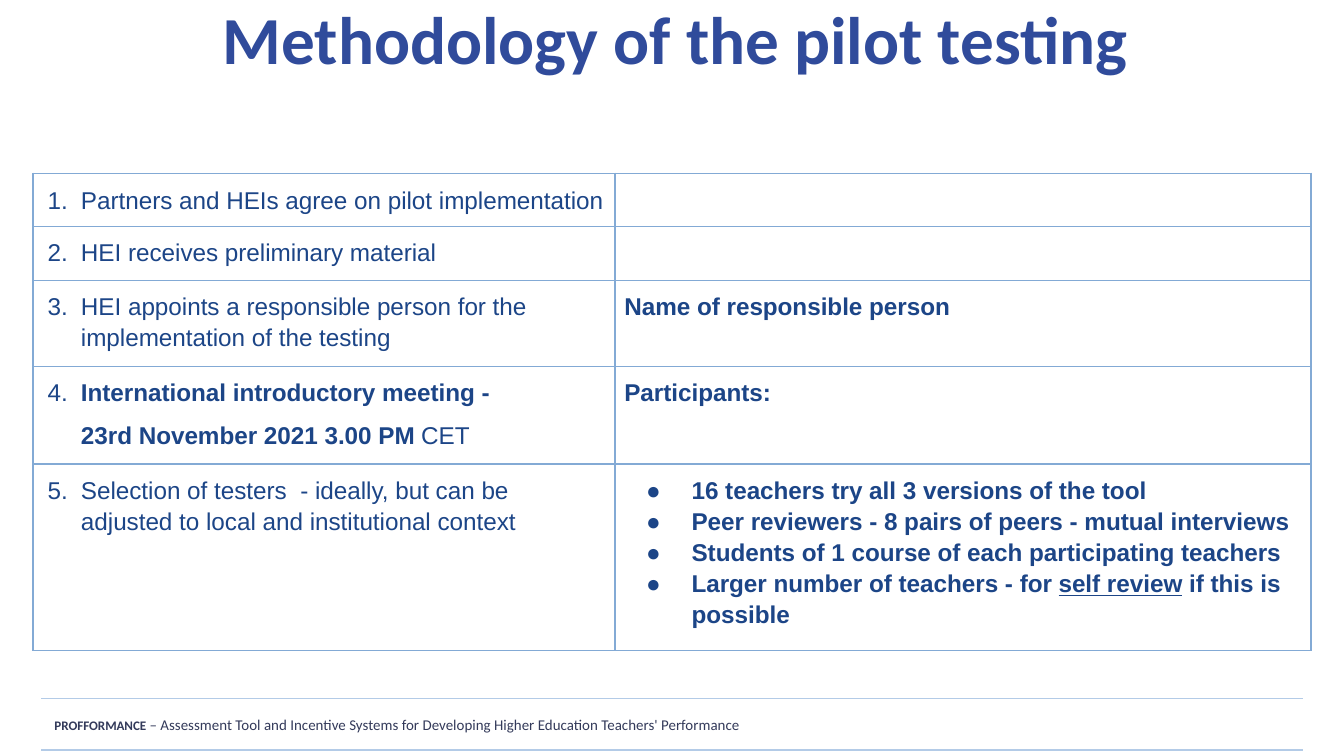
from dataclasses import dataclass

from lxml import etree
from pptx import Presentation
from pptx import util as u
from pptx.dml.color import RGBColor
from pptx.enum import shapes, text
from pptx.oxml.ns import qn


@dataclass(frozen=True)
class Theme:
    title: str = "304B9B"
    body: str = "1C4587"
    footer: str = "333A5A"
    rule: str = "B3CBE7"
    border: str = "83AAD5"
    title_size: int = 36
    body_size: int = 13
    footer_size: int = 8
    project_size: int = 7
    heading_font: str = "Calibri"
    body_font: str = "Arial"


theme = Theme()


def add_run(paragraph, words, color, **formats):
    run = paragraph.add_run()
    run.text = words
    run.font.color.rgb = RGBColor.from_string(color)
    for name, value in formats.items():
        setattr(run.font, name, value)


def add_text_area(slide, left, top, width, height):
    frame = slide.shapes.add_textbox(*map(u.Cm, (left, top, width, height))).text_frame
    margins = dict.fromkeys(
        ("margin_left", "margin_right", "margin_top", "margin_bottom"), u.Cm(0.25))
    formats = {"word_wrap": True, "vertical_anchor": text.MSO_ANCHOR.MIDDLE, **margins}
    for name, value in formats.items():
        setattr(frame, name, value)
    return frame.paragraphs[0]


prs = Presentation()
prs.slide_width, prs.slide_height = u.Cm(25.4), u.Cm(14.29)
slide = prs.slides.add_slide(prs.slide_layouts[6])

# Footer between two rules
for y in (13.2, 14.18):
    rule = slide.shapes.add_connector(
        shapes.MSO_CONNECTOR.STRAIGHT, u.Cm(0.78), u.Cm(y), u.Cm(24.62), u.Cm(y))
    rule.line.color.rgb = RGBColor.from_string(theme.rule)
    rule.line.width = u.Pt(0.75)
    etree.SubElement(rule._element.spPr, qn("a:effectLst"))

footer = add_text_area(slide, 0.78, 13.28, 17.12, 0.84)
add_run(footer, "PROFFORMANCE", theme.footer, bold=True,
        size=u.Pt(theme.project_size), name=theme.heading_font)
add_run(footer,
        " – Assessment Tool and Incentive Systems for Developing "
        "Higher Education Teachers' Performance",
        theme.footer, size=u.Pt(theme.footer_size), name=theme.heading_font)

# Title
title = add_text_area(slide, 3.96, 0, 20.07, 1.42)
add_run(title, "Methodology of the pilot testing", theme.title, bold=True,
        size=u.Pt(theme.title_size), name=theme.heading_font)

# Steps: each cell is a list of (paragraph kind, runs)
PLAIN, BOLD = {}, {"bold": True}
UNDERLINED = {"bold": True, "underline": True}
steps = [
    ([("step", [("1.\tPartners and HEIs agree on pilot implementation", PLAIN)])], []),
    ([("step", [("2.\tHEI receives preliminary material", PLAIN)])], []),
    ([("step", [("3.\tHEI appoints a responsible person for the "
                 "implementation of the testing", PLAIN)])],
     [("note", [("Name of responsible person", BOLD)])]),
    ([("step", [("4.\t", PLAIN), ("International introductory meeting -", BOLD)]),
      ("date", [("23rd November 2021 3.00 PM ", BOLD), ("CET", PLAIN)])],
     [("note", [("Participants:", BOLD)])]),
    ([("step", [("5.\tSelection of testers  - ideally, but can be "
                 "adjusted to local and institutional context", PLAIN)])],
     [("bullet", [("16 teachers try all 3 versions of the tool", BOLD)]),
      ("bullet", [("Peer reviewers - 8 pairs of peers - mutual interviews", BOLD)]),
      ("bullet", [("Students of 1 course of each participating teachers", BOLD)]),
      ("bullet", [("Larger number of teachers - for ", BOLD),
                  ("self review", UNDERLINED), (" if this is possible", BOLD)])]),
]
# Left margin and first-line indent of each paragraph kind, in cm
indents = {"step": (0.73, -0.63), "date": (0.73, 0), "note": (0, 0),
           "bullet": (1.27, -0.86)}
column_widths = (11, 13.16)
row_heights = (1, 1.02, 1.53, 1.75, 3.3)

# Table
table = slide.shapes.add_table(
    len(steps), 2, u.Cm(0.62), u.Cm(3.28),
    u.Cm(sum(column_widths)), u.Cm(sum(row_heights))).table
table.first_row = table.horz_banding = False
for column, width in zip(table.columns, column_widths):
    column.width = u.Cm(width)
for row, height in zip(table.rows, row_heights):
    row.height = u.Cm(height)

for r, step in enumerate(steps):
    for c, paragraphs in enumerate(step):
        cell = table.cell(r, c)
        for side in ("left", "right", "top", "bottom"):
            setattr(cell, f"margin_{side}", u.Cm(0.18))

        # Borders come before the fill in the cell properties
        properties = cell._tc.get_or_add_tcPr()
        for edge in ("lnL", "lnR", "lnT", "lnB"):
            line = etree.SubElement(properties, qn(f"a:{edge}"), w=str(u.Pt(1)))
            fill = etree.SubElement(line, qn("a:solidFill"))
            etree.SubElement(fill, qn("a:srgbClr"), val=theme.border)
        cell.fill.background()

        frame = cell.text_frame
        if not paragraphs:
            # Keeps an empty cell from stretching its row
            etree.SubElement(frame.paragraphs[0]._p, qn("a:endParaRPr"),
                             sz=str(theme.body_size * 100))
        for i, (kind, runs) in enumerate(paragraphs):
            paragraph = frame.paragraphs[0] if i == 0 else frame.add_paragraph()
            paragraph.line_spacing = 1.15
            if kind == "date":
                paragraph.space_before = u.Pt(6)
            margin, indent = indents[kind]
            layout = paragraph._p.get_or_add_pPr()
            layout.set("marL", str(u.Cm(margin)))
            layout.set("indent", str(u.Cm(indent)))
            if kind == "bullet":
                bullet_color = etree.SubElement(layout, qn("a:buClr"))
                etree.SubElement(bullet_color, qn("a:srgbClr"), val=theme.body)
                etree.SubElement(layout, qn("a:buFont"), typeface=theme.body_font)
                etree.SubElement(layout, qn("a:buChar"), char="●")
            for words, formats in runs:
                add_run(paragraph, words, theme.body, size=u.Pt(theme.body_size),
                        name=theme.body_font, **formats)

prs.save("out.pptx")
